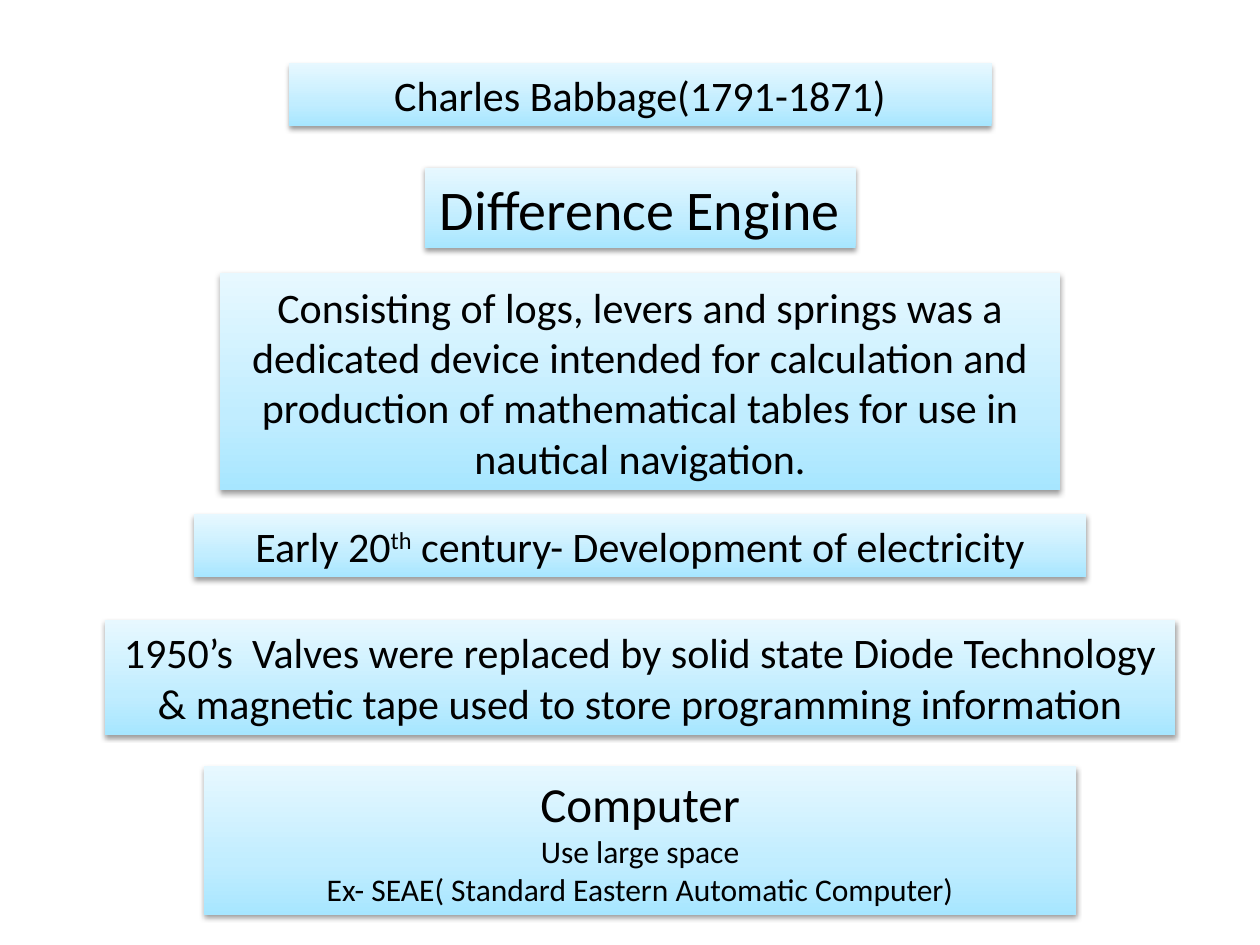
from pptx import Presentation
from pptx.dml.color import RGBColor
from pptx.enum.shapes import MSO_SHAPE as Shape
from pptx.enum.text import MSO_ANCHOR as Anchor, MSO_AUTO_SIZE as Fit, PP_ALIGN as Align
from pptx.oxml import parse_xml
from pptx.oxml.ns import nsdecls
from pptx.util import Inches, Pt

MID = 5.08  # all boxes share this centre line
STOPS = [(0, "A7E6FF"), (35, "C1EDFF"), (100, "E7F8FF")]

# top, width, height, lines of (text, size); ^ marks a superscript
BOXES = [
    (0.5, 5.58, 0.5, [("Charles Babbage(1791-1871)", 24)]),
    (1.33, 3.42, 0.64, [("Difference Engine", 32)]),
    (2.17, 6.67, 1.72, [("Consisting of logs, levers and springs was a dedicated "
                         "device intended for calculation and production of "
                         "mathematical tables for use in nautical navigation.", 24)]),
    (4.08, 7.08, 0.5, [("Early 20^th^ century- Development of electricity", 24)]),
    (4.92, 8.5, 0.91, [("1950’s  Valves were replaced by solid state Diode Technology "
                        "& magnetic tape used to store programming information", 24)]),
    (6.08, 6.92, 1.18, [("Computer", 28),
                        ("Use large space", 18),
                        ("Ex- SEAE( Standard Eastern Automatic Computer)", 18)]),
]


def color(code):
    return RGBColor.from_string(code)


def write(para, text, size=24, font="Calibri", ink="000000", align=Align.CENTER):
    """Fill a paragraph; text between ^ marks is superscript."""
    para.alignment = align
    for i, part in enumerate(text.split("^")):
        run = para.add_run()
        run.text = part
        run.font.size = Pt(size)
        run.font.name = font
        run.font.color.rgb = color(ink)
        if i % 2:
            run._r.get_or_add_rPr().set("baseline", "30000")


def shade(box):
    """Give a box its upward gradient and soft drop shadow, without a line."""
    stops = "".join(f'<a:gs pos="{pos * 1000}"><a:srgbClr val="{code}"/></a:gs>'
                    for pos, code in STOPS)
    props = box._element.spPr
    props.append(parse_xml(
        f'<a:gradFill {nsdecls("a")} rotWithShape="1"><a:gsLst>{stops}</a:gsLst>'
        '<a:lin ang="16200000" scaled="0"/></a:gradFill>'))
    box.line.fill.background()
    props.append(parse_xml(
        f'<a:effectLst {nsdecls("a")}><a:outerShdw blurRad="{Pt(3.1)}" '
        f'dist="{Pt(1.6)}" dir="5400000" rotWithShape="0"><a:srgbClr val="000000">'
        '<a:alpha val="38000"/></a:srgbClr></a:outerShdw></a:effectLst>'))


def add_box(slide, top, width, height, lines):
    box = slide.shapes.add_shape(Shape.RECTANGLE, Inches(MID - width / 2),
                                 Inches(top), Inches(width), Inches(height))
    shade(box)
    frame = box.text_frame
    frame.word_wrap = True
    frame.auto_size = Fit.SHAPE_TO_FIT_TEXT
    frame.vertical_anchor = Anchor.MIDDLE
    for i, (text, size) in enumerate(lines):
        para = frame.add_paragraph() if i else frame.paragraphs[0]
        write(para, text, size=size)


def main():
    deck = Presentation()
    deck.slide_width, deck.slide_height = Inches(10), Inches(7.5)
    slide = deck.slides.add_slide(deck.slide_layouts[6])
    for spec in BOXES:
        add_box(slide, *spec)
    deck.save("out.pptx")


if __name__ == "__main__":
    main()
